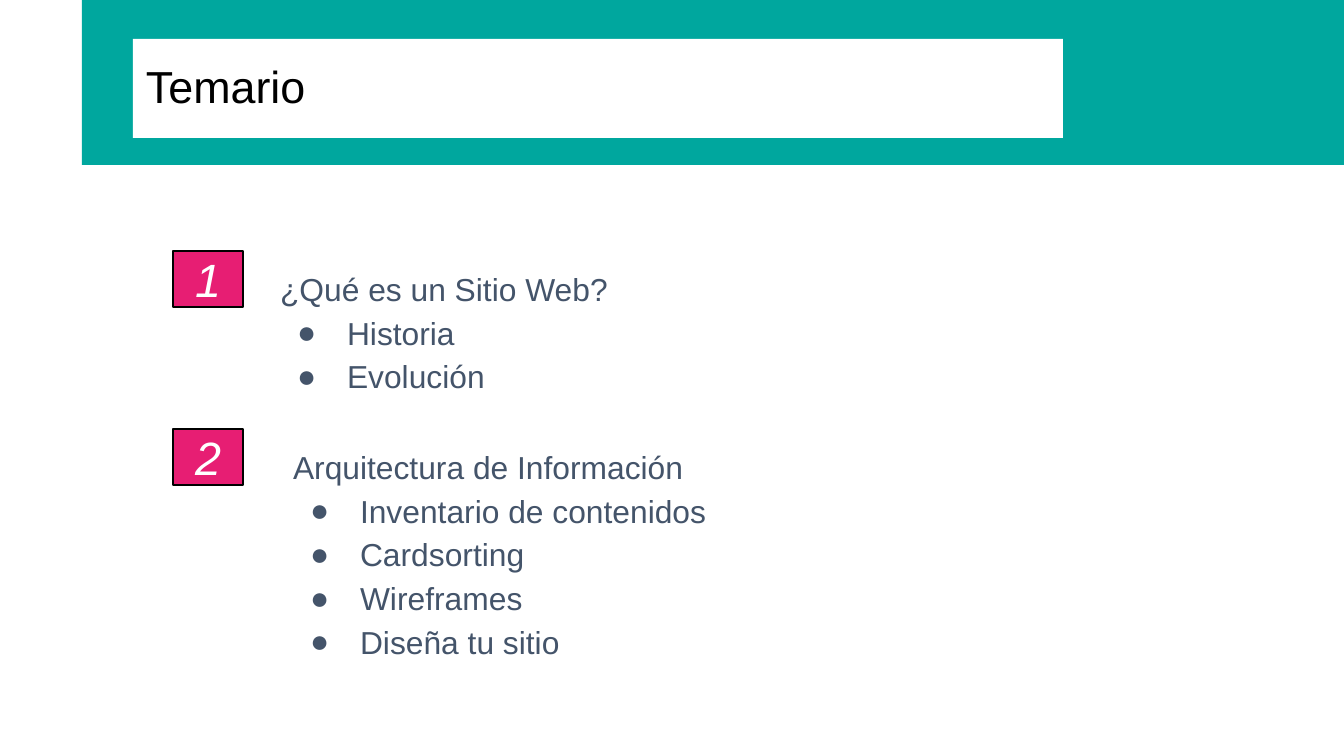
from dataclasses import dataclass

from lxml.etree import SubElement
from pptx import Presentation
from pptx.dml.color import RGBColor
from pptx.enum.shapes import MSO_SHAPE as Shape
from pptx.enum.text import MSO_ANCHOR as Anchor, PP_ALIGN as Align
from pptx.oxml.ns import qn
from pptx.util import Emu, Pt

EMU_PER_PX = 914400 / 134.4


@dataclass(frozen=True)
class Theme:
    font: str = "Arial"
    teal: str = "00A79E"
    pink: str = "E71E73"
    white: str = "FFFFFF"
    black: str = "000000"
    slate: str = "44546A"
    title_size: int = 24
    number_size: int = 25
    body_size: int = 17


@dataclass(frozen=True)
class Box:
    left: int
    top: int
    width: int
    height: int

    def emu(self) -> list[Emu]:
        return [px(v) for v in (self.left, self.top, self.width, self.height)]


@dataclass(frozen=True)
class Topic:
    number: int
    box: Box
    heading: str
    items: tuple[str, ...]


THEME = Theme()
TOPICS = (
    Topic(1, Box(267, 251, 933, 155), "¿Qué es un Sitio Web?",
          ("Historia", "Evolución")),
    Topic(2, Box(280, 429, 933, 212), "Arquitectura de Información",
          ("Inventario de contenidos", "Cardsorting", "Wireframes",
           "Diseña tu sitio")),
)


def px(value: int) -> Emu:
    return Emu(round(value * EMU_PER_PX))


def rgb(value: str) -> RGBColor:
    return RGBColor.from_string(value)


def add_rect(slide, box: Box, fill: str, line: str | None = None):
    sp = slide.shapes.add_shape(Shape.RECTANGLE, *box.emu())
    sp.shadow.inherit = False
    sp.fill.solid()
    sp.fill.fore_color.rgb = rgb(fill)
    if line:
        sp.line.color.rgb = rgb(line)
        sp.line.width = Pt(0.75)
    else:
        sp.line.fill.background()
    return sp


def add_bullet(p, color: str) -> None:
    pPr = p._p.get_or_add_pPr()
    pPr.set("marL", str(px(67)))
    pPr.set("indent", str(px(-50)))
    clr = SubElement(pPr, qn("a:buClr"))
    SubElement(clr, qn("a:srgbClr"), val=color)
    SubElement(pPr, qn("a:buFont"), typeface=THEME.font)
    SubElement(pPr, qn("a:buChar"), char="●")


def write(sp, lines: tuple[str, ...], *, size: int, color: str,
          italic: bool = False, align=Align.LEFT, anchor=Anchor.MIDDLE,
          spacing: float = 1.0, inset_y: int = 13) -> None:
    """Fill a shape with text; every line after the first is a bullet."""
    tf = sp.text_frame
    tf.word_wrap = True
    tf.vertical_anchor = anchor
    tf.margin_left = tf.margin_right = px(13)
    tf.margin_top = tf.margin_bottom = px(inset_y)
    for i, line in enumerate(lines):
        p = tf.add_paragraph() if i else tf.paragraphs[0]
        if i:
            add_bullet(p, color)
        p.alignment = align
        p.line_spacing = spacing
        r = p.add_run()
        r.text = line
        r.font.name = THEME.font
        r.font.size = Pt(size)
        r.font.italic = italic
        r.font.color.rgb = rgb(color)


def add_topic(slide, topic: Topic) -> None:
    badge = add_rect(slide, Box(173, topic.box.top, 70, 56),
                     THEME.pink, THEME.black)
    write(badge, (str(topic.number),), size=THEME.number_size,
          color=THEME.white, italic=True, align=Align.CENTER)
    body = slide.shapes.add_textbox(*topic.box.emu())
    write(body, (topic.heading, *topic.items), size=THEME.body_size,
          color=THEME.slate, anchor=Anchor.TOP, spacing=1.15)


def main() -> None:
    prs = Presentation()
    prs.slide_width, prs.slide_height = px(1344), px(756)
    slide = prs.slides.add_slide(prs.slide_layouts[6])
    add_rect(slide, Box(82, 0, 1262, 165), THEME.teal)
    title = add_rect(slide, Box(133, 39, 930, 99), THEME.white)
    write(title, ("Temario",), size=THEME.title_size, color=THEME.black,
          spacing=0.9, inset_y=7)
    for topic in TOPICS:
        add_topic(slide, topic)
    prs.save("out.pptx")


if __name__ == "__main__":
    main()
